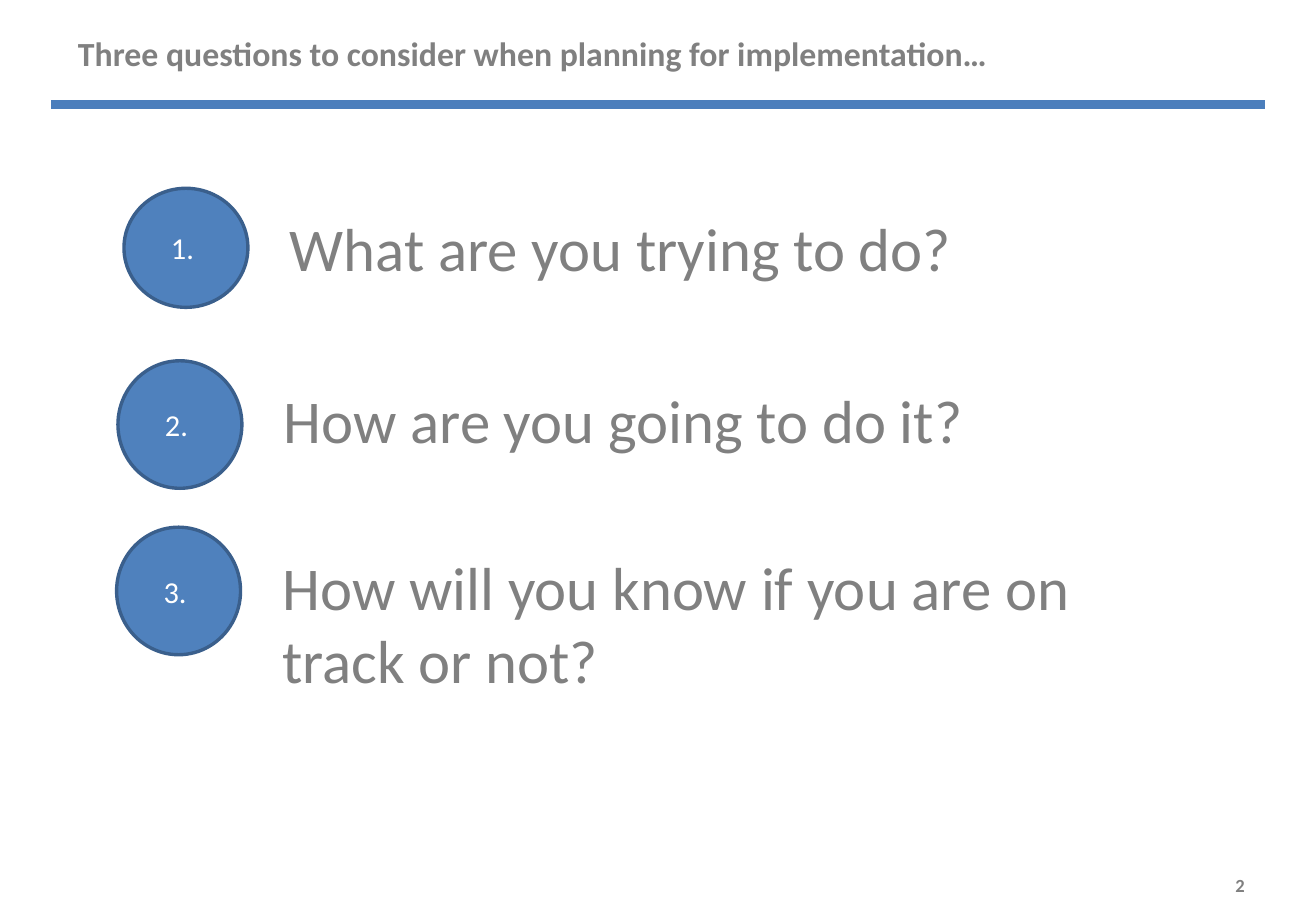
from dataclasses import dataclass

from lxml.etree import SubElement
from pptx import Presentation
from pptx.dml.color import RGBColor
from pptx.enum.shapes import MSO_CONNECTOR, MSO_SHAPE
from pptx.enum.text import MSO_ANCHOR, PP_ALIGN
from pptx.oxml.ns import qn
from pptx.util import Inches, Pt

WIDTH, HEIGHT = Inches(10.83), Inches(7.5)
GRID = 100  # columns and rows across the slide
GREY, WHITE, BLUE, EDGE, RULE = "808080", "FFFFFF", "4F81BD", "3A5F8C", "4B7EBC"


@dataclass
class Box:
    col: float
    row: float
    cols: float
    rows: float

    def place(self) -> tuple[int, int, int, int]:
        return across(self.col), down(self.row), across(self.cols), down(self.rows)


@dataclass
class Question:
    text: str
    disc: Box
    cols: float
    rows: float


QUESTIONS = [
    Question("What are you trying to do?", Box(9.42, 20.67, 9.42, 13.07), 53.65, 9.47),
    Question("How are you going to do it?", Box(8.96, 39.6, 9.42, 14), 53.92, 9.47),
    Question("How will you know if you are on track or not?",
             Box(8.86, 57.87, 9.42, 14), 65.47, 17.47),
]
TEXT_COL, TEXT_ROW = 11.7, 1.8  # offset of a question from its disc


def across(cols: float) -> int:
    return round(WIDTH * cols / GRID)


def down(rows: float) -> int:
    return round(HEIGHT * rows / GRID)


def paint(target, color: str) -> None:
    """Set a solid colour on a fill."""
    target.solid()
    target.fore_color.rgb = RGBColor.from_string(color)


def write(shape, text: str, size: float, color: str = GREY, bold: bool = False,
          align=PP_ALIGN.LEFT, anchor=MSO_ANCHOR.MIDDLE) -> None:
    frame = shape.text_frame
    frame.text = text
    frame.word_wrap = True
    frame.vertical_anchor = anchor
    frame.paragraphs[0].alignment = align
    font = frame.paragraphs[0].runs[0].font
    font.name, font.size, font.bold = "Calibri", Pt(size), bold
    paint(font.fill, color)


def add_rule(slide) -> None:
    row = down(11.47)
    rule = slide.shapes.add_connector(
        MSO_CONNECTOR.STRAIGHT, across(3.88), row, across(96.12), row)
    rule.line.width = Pt(5)
    paint(rule.line.fill, RULE)
    SubElement(rule._element.spPr, qn("a:effectLst"))


def add_title(slide) -> None:
    title = slide.shapes.title
    title.left, title.top, title.width, title.height = Box(5, -0.53, 90, 12.67).place()
    write(title, "Three questions to consider when planning for implementation…",
          20, bold=True)


def add_question(slide, number: int, item: Question) -> None:
    disc = slide.shapes.add_shape(MSO_SHAPE.OVAL, *item.disc.place())
    disc.shadow.inherit = False
    paint(disc.fill, BLUE)
    paint(disc.line.fill, EDGE)
    disc.line.width = Pt(2)
    write(disc, f"{number}. ", 18, WHITE, align=PP_ALIGN.CENTER)
    area = Box(item.disc.col + TEXT_COL, item.disc.row + TEXT_ROW, item.cols, item.rows)
    label = slide.shapes.add_textbox(*area.place())
    write(label, item.text, 36, anchor=MSO_ANCHOR.TOP)


def main() -> None:
    deck = Presentation()
    deck.slide_width, deck.slide_height = WIDTH, HEIGHT
    slide = deck.slides.add_slide(deck.slide_layouts.get_by_name("Title Only"))
    add_rule(slide)
    add_title(slide)
    page = slide.shapes.add_textbox(*Box(72.1, 94.27, 23.4, 5.73).place())
    write(page, "2", 11, bold=True, align=PP_ALIGN.RIGHT)
    for number, item in enumerate(QUESTIONS, 1):
        add_question(slide, number, item)
    deck.save("out.pptx")


if __name__ == "__main__":
    main()
